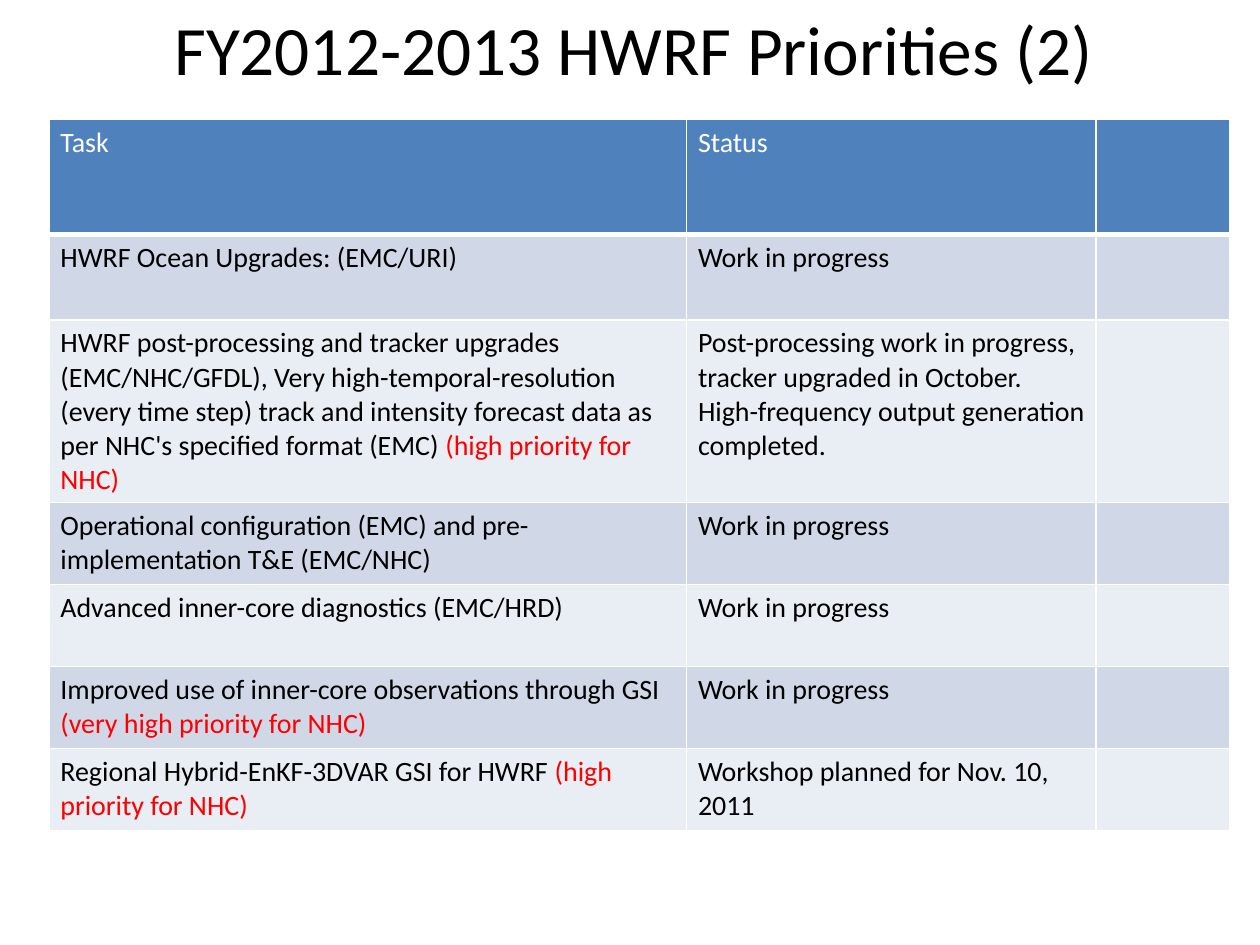
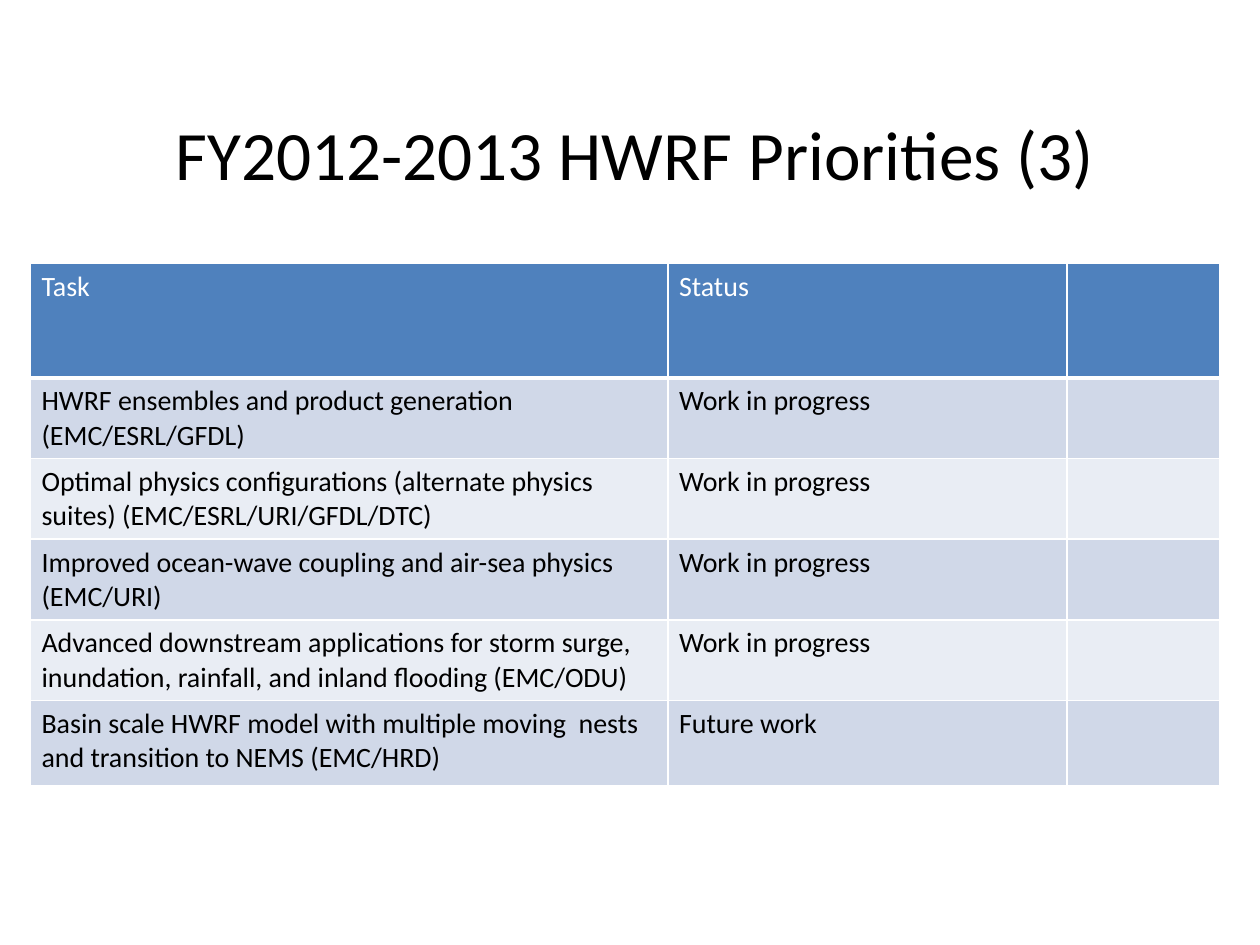
from dataclasses import dataclass

from lxml.etree import SubElement
from pptx import Presentation
from pptx.dml.color import RGBColor
from pptx.enum.text import MSO_ANCHOR, PP_ALIGN
from pptx.oxml.ns import qn
from pptx.util import Inches, Pt

# Shared style
FONT = "Calibri"
TITLE_SIZE, CELL_SIZE = 39.6, 16
BLACK, WHITE, RED = "000000", "FFFFFF", "FF0000"
HEADER_FILL = "4F81BD"
BAND_FILLS = ("D0D8E8", "E9EDF4")
HEADER_HEIGHT = 0.91
HEADER = ("Task", "Status")
IN_PROGRESS = "Work in progress"


@dataclass(frozen=True)
class Task:
    name: str
    status: str = IN_PROGRESS
    priority: str = ""
    height: float = 0.65


@dataclass(frozen=True)
class PrioritySlide:
    title: str
    title_at: tuple[float, float]
    table_at: tuple[float, float]
    col_widths: tuple[float, ...]
    tasks: tuple[Task, ...]


SLIDES = (
    PrioritySlide(
        "FY2012-2013 HWRF Priorities (2)", (0.53, 0.11), (0.39, 0.95), (5.06, 3.25, 1.06),
        (
            Task("HWRF Ocean Upgrades: (EMC/URI)", height=0.68),
            Task("HWRF post-processing and tracker upgrades (EMC/NHC/GFDL), "
                 "Very high-temporal-resolution (every time step) track and intensity "
                 "forecast data as per NHC's specified format (EMC) ",
                 "Post-processing work in progress, tracker upgraded in October.  "
                 "High-frequency output generation completed.",
                 "(high priority for NHC)", 1.45),
            Task("Operational configuration (EMC) and pre-implementation T&E (EMC/NHC)"),
            Task("Advanced inner-core diagnostics (EMC/HRD)"),
            Task("Improved use of inner-core observations through GSI ",
                 priority="(very high priority for NHC)"),
            Task("Regional Hybrid-EnKF-3DVAR GSI for HWRF ",
                 "Workshop planned for Nov. 10, 2011", "(high priority for NHC)"),
        ),
    ),
    PrioritySlide(
        "FY2012-2013 HWRF Priorities (3)", (0.54, 0.95), (0.24, 2.09), (5.06, 3.17, 1.21),
        (
            Task("HWRF ensembles and product generation (EMC/ESRL/GFDL)", height=0.64),
            Task("Optimal physics configurations (alternate physics suites) "
                 "(EMC/ESRL/URI/GFDL/DTC)", height=0.64),
            Task("Improved ocean-wave coupling and air-sea physics (EMC/URI)", height=0.64),
            Task("Advanced downstream applications for storm surge, inundation, "
                 "rainfall, and inland flooding (EMC/ODU)", height=0.64),
            Task("Basin scale HWRF model with multiple moving  nests and transition "
                 "to NEMS (EMC/HRD)", "Future work", height=0.68),
        ),
    ),
)


def rgb(color: str) -> RGBColor:
    return RGBColor.from_string(color)


def style_paragraph(p, size: float, color: str) -> None:
    p.font.name = FONT
    p.font.size = Pt(size)
    p.font.bold = False
    p.font.color.rgb = rgb(color)


def add_title(slide, text: str, at: tuple[float, float]) -> None:
    left, top = at
    sp = slide.shapes.add_textbox(Inches(left), Inches(top), Inches(9), Inches(0.54))
    tf = sp.text_frame
    tf.word_wrap = True
    tf.vertical_anchor = MSO_ANCHOR.MIDDLE
    tf.margin_top, tf.margin_bottom = Inches(0.04), Inches(0.05)
    p = tf.paragraphs[0]
    p.alignment = PP_ALIGN.CENTER
    p.add_run().text = text
    style_paragraph(p, TITLE_SIZE, BLACK)


def set_borders(cell, bottom: float) -> None:
    """White cell borders; these must precede the fill in the cell properties."""
    tc_pr = cell._tc.get_or_add_tcPr()
    for side, width in (("L", 1), ("R", 1), ("T", 1), ("B", bottom)):
        ln = SubElement(tc_pr, qn(f"a:ln{side}"), w=str(Pt(width)))
        fill = SubElement(ln, qn("a:solidFill"))
        SubElement(fill, qn("a:srgbClr"), val=WHITE)


def fill_cell(cell, text: str, fill: str, color: str = BLACK,
              priority: str = "", bottom: float = 1) -> None:
    set_borders(cell, bottom)
    cell.fill.solid()
    cell.fill.fore_color.rgb = rgb(fill)
    cell.margin_left = cell.margin_right = Inches(0.09)
    cell.margin_top = cell.margin_bottom = Inches(0.05)
    p = cell.text_frame.paragraphs[0]
    style_paragraph(p, CELL_SIZE, color)
    if text:
        p.add_run().text = text
    if priority:
        r = p.add_run()
        r.text = priority
        r.font.color.rgb = rgb(RED)


def add_task_table(slide, content: PrioritySlide) -> None:
    left, top = content.table_at
    heights = [HEADER_HEIGHT] + [task.height for task in content.tasks]
    table = slide.shapes.add_table(
        len(heights), len(content.col_widths), Inches(left), Inches(top),
        Inches(sum(content.col_widths)), Inches(sum(heights))).table
    for column, width in zip(table.columns, content.col_widths):
        column.width = Inches(width)
    for row, height in zip(table.rows, heights):
        row.height = Inches(height)

    # Header row, with an empty last column
    for col, text in enumerate((*HEADER, "")):
        fill_cell(table.cell(0, col), text, HEADER_FILL, WHITE, bottom=3)

    # Banded task rows
    for row, task in enumerate(content.tasks, start=1):
        fill = BAND_FILLS[(row - 1) % 2]
        fill_cell(table.cell(row, 0), task.name, fill, priority=task.priority)
        fill_cell(table.cell(row, 1), task.status, fill)
        fill_cell(table.cell(row, 2), "", fill)


def main() -> None:
    prs = Presentation()
    prs.slide_width, prs.slide_height = Inches(10), Inches(7.5)
    for content in SLIDES:
        slide = prs.slides.add_slide(prs.slide_layouts[6])
        add_title(slide, content.title, content.title_at)
        add_task_table(slide, content)
    prs.save("out.pptx")


if __name__ == "__main__":
    main()
